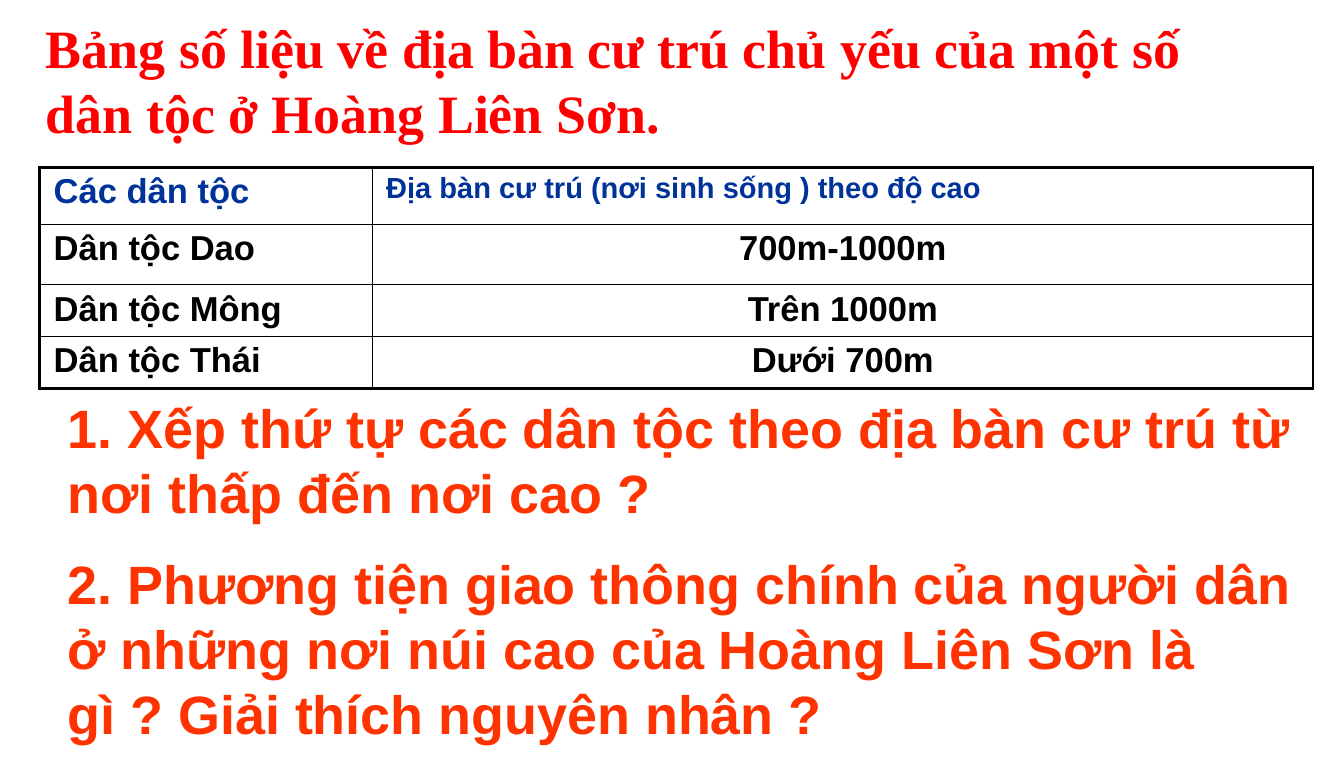
from dataclasses import dataclass

from lxml.etree import SubElement
from pptx import Presentation
from pptx.dml.color import RGBColor
from pptx.enum.text import MSO_ANCHOR as Anchor, MSO_AUTO_SIZE as AutoSize, PP_ALIGN as Align
from pptx.oxml.ns import qn
from pptx.util import Inches, Pt


@dataclass(frozen=True)
class Theme:
    title_color: str = "FF0000"
    question_color: str = "FF3300"
    header_color: str = "003399"
    ink: str = "000000"
    title_font: str = "Times New Roman"
    body_font: str = "Arial"
    large: float = 39
    medium: float = 25
    small: float = 21
    outer_line: float = 2.25
    inner_line: float = 1


THEME = Theme()
TITLE = "Bảng số liệu về địa bàn cư trú chủ yếu của một số dân tộc ở Hoàng Liên Sơn."
RESIDENCE = [
    ("Các dân tộc", "Địa bàn cư trú (nơi sinh sống ) theo độ cao"),
    ("Dân tộc Dao", "700m-1000m"),
    ("Dân tộc Mông", "Trên 1000m"),
    ("Dân tộc Thái", "Dưới 700m"),
]
QUESTIONS = [
    "1. Xếp thứ tự các dân tộc theo địa bàn cư trú từ nơi thấp đến nơi cao ?",
    "2. Phương tiện giao thông chính của người dân ở những nơi núi cao của "
    "Hoàng Liên Sơn là gì ? Giải thích nguyên nhân ?",
]
COLUMN_WIDTHS = (3.34, 9.45)
ROW_HEIGHTS = (0.57, 0.61, 0.52, 0.52)


def apply(target, values):
    for name, value in values.items():
        setattr(target, name, value)


def write(paragraph, text, font, size, color, align=Align.LEFT):
    paragraph.alignment = align
    run = paragraph.add_run()
    run.text = text
    apply(run.font, {"name": font, "size": Pt(size), "bold": True})
    run.font.color.rgb = RGBColor.from_string(color)


def fill_placeholder(placeholder, box, texts, font, color):
    apply(placeholder, dict(zip(("left", "top", "width", "height"), map(Inches, box))))
    frame = placeholder.text_frame
    apply(frame, {
        "margin_left": Inches(0.12), "margin_right": Inches(0.12),
        "margin_top": Inches(0.06), "margin_bottom": Inches(0.06),
        "word_wrap": True, "vertical_anchor": Anchor.TOP, "auto_size": AutoSize.NONE,
    })
    for index, text in enumerate(texts):
        paragraph = frame.add_paragraph() if index else frame.paragraphs[0]
        write(paragraph, text, font, THEME.large, color)
        paragraph.space_before = Pt(THEME.large / 2)
        properties = paragraph._p.get_or_add_pPr()
        properties.set("marL", "0")
        properties.set("indent", "0")
        SubElement(properties, qn("a:buNone"))


def draw_borders(cell, outer_edges):
    properties = cell._tc.get_or_add_tcPr()
    for edge, is_outer in outer_edges.items():
        width = Pt(THEME.outer_line if is_outer else THEME.inner_line)
        line = SubElement(properties, qn(f"a:ln{edge}"), w=str(width))
        SubElement(SubElement(line, qn("a:solidFill")), qn("a:srgbClr"), val=THEME.ink)


def add_residence_table(slide):
    last_row, last_column = len(ROW_HEIGHTS) - 1, len(COLUMN_WIDTHS) - 1
    table = slide.shapes.add_table(
        len(ROW_HEIGHTS), len(COLUMN_WIDTHS), Inches(0.4), Inches(1.68),
        Inches(sum(COLUMN_WIDTHS)), Inches(sum(ROW_HEIGHTS))).table
    for column, width in zip(table.columns, COLUMN_WIDTHS):
        column.width = Inches(width)
    for r, (height, texts) in enumerate(zip(ROW_HEIGHTS, RESIDENCE)):
        table.rows[r].height = Inches(height)
        for c, text in enumerate(texts):
            cell = table.cell(r, c)
            apply(cell, {"margin_left": Inches(0.14), "margin_right": Inches(0.14),
                         "margin_top": Inches(0.05), "margin_bottom": Inches(0.05)})
            draw_borders(cell, {"L": c == 0, "R": c == last_column,
                                "T": r == 0, "B": r == last_row})
            cell.fill.background()
            size = THEME.small if r == 0 and c else THEME.medium
            color = THEME.ink if r else THEME.header_color
            align = Align.CENTER if r and c else Align.LEFT
            paragraph = cell.text_frame.paragraphs[0]
            write(paragraph, text, THEME.body_font, size, color, align)
            paragraph.space_before = Pt(size / 5)


def main():
    presentation = Presentation()
    apply(presentation, {"slide_width": Inches(13.5), "slide_height": Inches(7.8)})
    slide = presentation.slides.add_slide(presentation.slide_layouts[1])
    title, questions = slide.placeholders
    fill_placeholder(title, (0.34, 0.09, 12.49, 1.44), [TITLE],
                     THEME.title_font, THEME.title_color)
    add_residence_table(slide)
    fill_placeholder(questions, (0.56, 3.9, 12.6, 3.73), QUESTIONS,
                     THEME.body_font, THEME.question_color)
    presentation.save("out.pptx")


if __name__ == "__main__":
    main()
